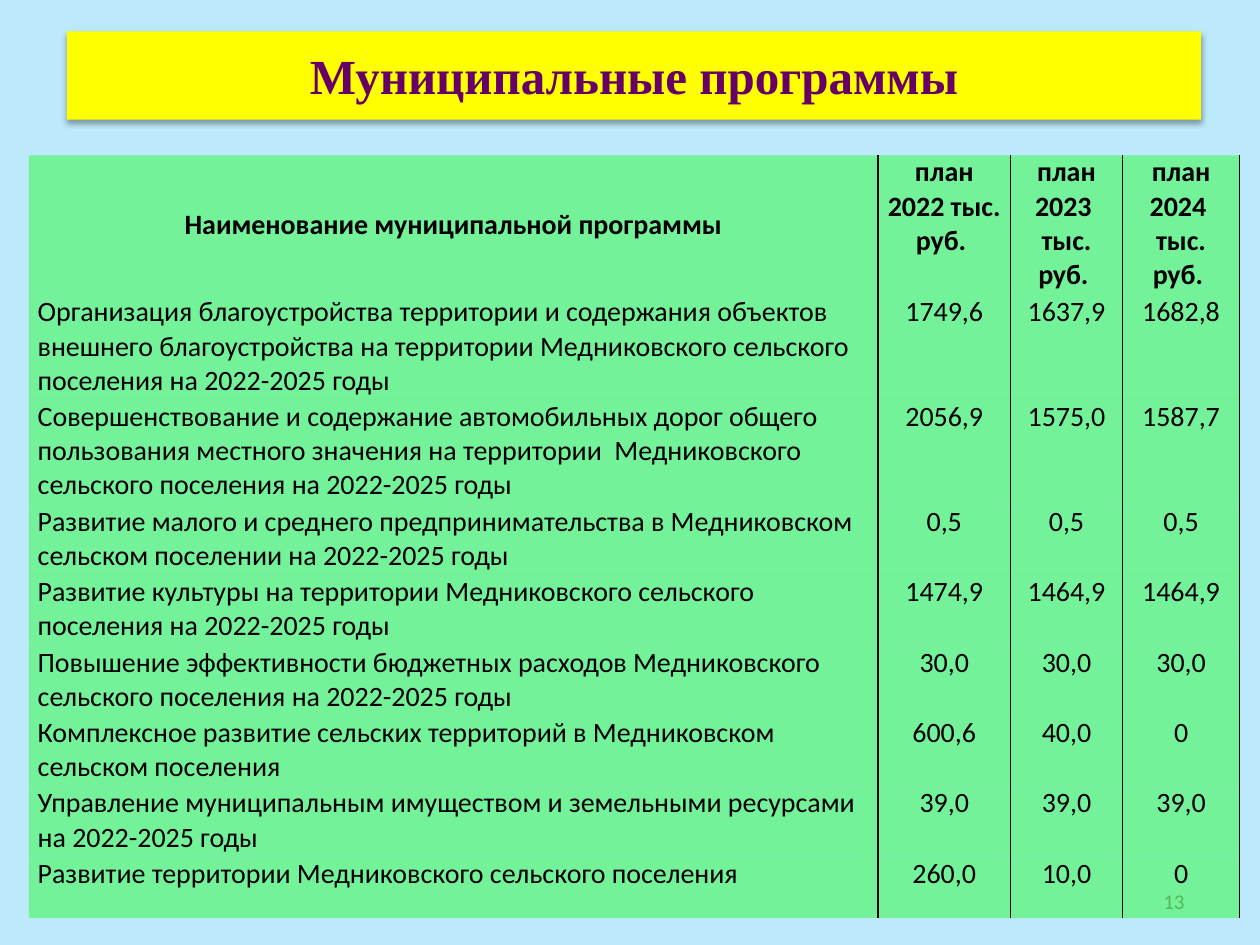
from lxml.etree import SubElement
from pptx import Presentation
from pptx.dml.color import RGBColor
from pptx.enum.text import MSO_ANCHOR as Anchor, PP_ALIGN as Align
from pptx.oxml.ns import qn
from pptx.util import Cm, Pt

HEADER = ("Наименование муниципальной программы", "план 2022 тыс. руб. ",
          "план 2023  тыс. руб. ", "план 2024  тыс. руб. ")
PROGRAMMES = [
    ("Организация благоустройства территории и содержания объектов внешнего благоустройства "
     "на территории Медниковского сельского поселения на 2022-2025 годы",
     "1749,6", "1637,9", "1682,8"),
    ("Совершенствование и содержание автомобильных дорог общего пользования местного значения "
     "на территории  Медниковского сельского поселения на 2022-2025 годы",
     "2056,9", "1575,0", "1587,7"),
    ("Развитие малого и среднего предпринимательства в Медниковском сельском поселении "
     "на 2022-2025 годы", "0,5", "0,5", "0,5"),
    ("Развитие культуры на территории Медниковского сельского поселения на 2022-2025 годы",
     "1474,9", "1464,9", "1464,9"),
    ("Повышение эффективности бюджетных расходов Медниковского сельского поселения "
     "на 2022-2025 годы", "30,0", "30,0", "30,0"),
    ("Комплексное развитие сельских территорий в Медниковском сельском поселения",
     "600,6", "40,0", "0"),
    ("Управление муниципальным имуществом и земельными ресурсами на 2022-2025 годы",
     "39,0", "39,0", "39,0"),
    ("Развитие территории Медниковского сельского поселения", "260,0", "10,0", "0"),
]
COLUMN_WIDTHS = (17.12, 2.67, 2.26, 2.36)
ROW_HEIGHTS = (2.82, 2.11, 2.11) + (1.42,) * 5 + (1.24,)


def color(value):
    return RGBColor.from_string(value)


class ProgrammePage:
    """Holds the style and the current slide, and adds its elements."""

    font = "Calibri"
    ink = "000000"
    green = "00FF00"

    def __init__(self, deck):
        self.page = deck.slides.add_slide(deck.slide_layouts[5])
        self.paint(self.page.background, "BDEAFB")

    def paint(self, target, value):
        target.fill.solid()
        target.fill.fore_color.rgb = color(value)

    def set_text(self, frame, text, size, value, align, bold=False, font=None):
        frame.text = text
        frame.word_wrap = True
        para = frame.paragraphs[0]
        para.alignment = align
        for span in para.runs:
            span.font.name = font or self.font
            span.font.size = Pt(size)
            span.font.bold = bold
            span.font.color.rgb = color(value)

    def title(self, text, left, top, width, height):
        box = self.page.shapes.title
        box.left, box.top, box.width, box.height = Cm(left), Cm(top), Cm(width), Cm(height)
        self.paint(box, "FFFF00")
        self.set_text(box.text_frame, text, 28, "660066", Align.CENTER, True, "Times New Roman")
        box.text_frame.vertical_anchor = Anchor.MIDDLE
        effects = SubElement(box._element.spPr, qn("a:effectLst"))
        shadow = SubElement(effects, qn("a:outerShdw"), blurRad=str(Pt(3.1)),
                            dist=str(Pt(1.8)), dir="5400000", rotWithShape="0")
        tone = SubElement(shadow, qn("a:srgbClr"), val=self.ink)
        SubElement(tone, qn("a:alpha"), val="35000")

    def number(self, text, left, top, width, height):
        box = self.page.shapes.add_textbox(Cm(left), Cm(top), Cm(width), Cm(height))
        self.set_text(box.text_frame, text, 12, "8C8C8C", Align.RIGHT)
        box.text_frame.vertical_anchor = Anchor.MIDDLE

    def borders(self, cell, visible):
        properties = cell._tc.get_or_add_tcPr()
        for side in ("lnL", "lnR", "lnT", "lnB"):
            line = SubElement(properties, qn("a:" + side), w=str(Pt(0.75)))
            if side in visible:
                fill = SubElement(line, qn("a:solidFill"))
                SubElement(fill, qn("a:srgbClr"), val=self.ink)
            else:
                SubElement(line, qn("a:noFill"))

    def cell(self, cell, text, is_header, is_name):
        self.borders(cell, ("lnR",) if is_name else ("lnL", "lnR"))
        self.paint(cell, self.green)
        tone = cell._tc.tcPr.find(qn("a:solidFill")).find(qn("a:srgbClr"))
        SubElement(tone, qn("a:alpha"), val="39000")
        cell.margin_left = cell.margin_right = Cm(0.18)
        cell.margin_top = cell.margin_bottom = 0
        centred = is_header or not is_name
        cell.vertical_anchor = Anchor.MIDDLE if is_header and is_name else Anchor.TOP
        self.set_text(cell.text_frame, text, 16, self.ink,
                      Align.CENTER if centred else Align.LEFT, is_header)

    def table(self, rows, left, top):
        table = self.page.shapes.add_table(
            len(rows), len(COLUMN_WIDTHS), Cm(left), Cm(top),
            Cm(sum(COLUMN_WIDTHS)), Cm(sum(ROW_HEIGHTS))).table
        table.horz_banding = False
        for column, width in zip(table.columns, COLUMN_WIDTHS):
            column.width = Cm(width)
        for i, (row, height) in enumerate(zip(table.rows, ROW_HEIGHTS)):
            row.height = Cm(height)
            for j, text in enumerate(rows[i]):
                self.cell(table.cell(i, j), text, i == 0, j == 0)


def main():
    deck = Presentation()
    deck.slide_width, deck.slide_height = Cm(25.4), Cm(19.05)
    page = ProgrammePage(deck)
    page.number("13", 18.2, 17.66, 5.93, 1.01)
    page.table([HEADER, *PROGRAMMES], 0.58, 3.13)
    page.title("Муниципальные программы", 1.35, 0.63, 22.86, 1.78)
    deck.save("out.pptx")


if __name__ == "__main__":
    main()
